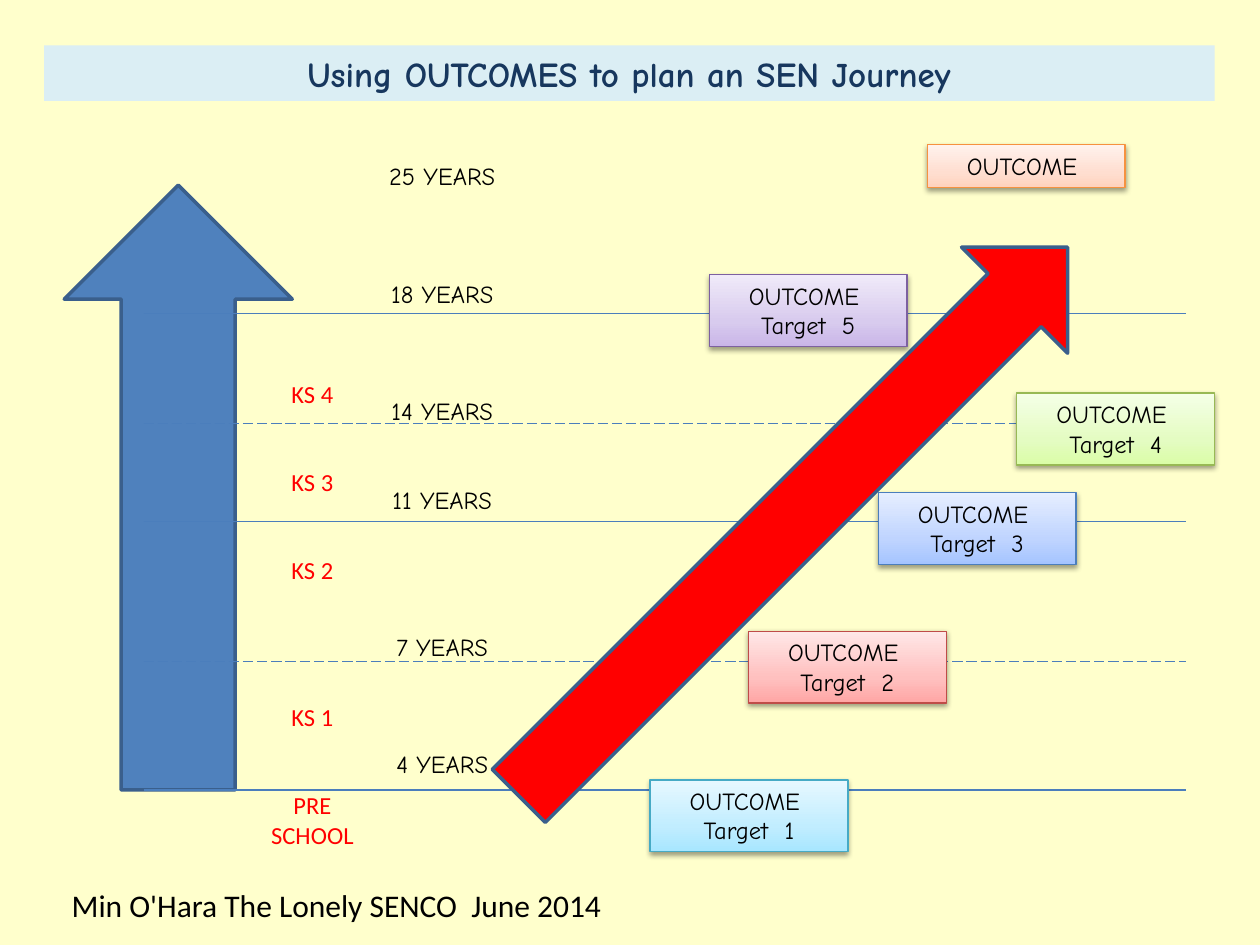
from dataclasses import dataclass

from lxml import etree
from pptx import Presentation
from pptx.dml.color import RGBColor
from pptx.enum.dml import MSO_LINE
from pptx.enum.shapes import MSO_CONNECTOR, MSO_SHAPE
from pptx.enum.text import MSO_ANCHOR, MSO_AUTO_SIZE, PP_ALIGN
from pptx.oxml import parse_xml
from pptx.oxml.ns import nsdecls, qn
from pptx.util import Emu, Inches, Pt

CENTER, LEFT = PP_ALIGN.CENTER, PP_ALIGN.LEFT
TOP, MIDDLE = MSO_ANCHOR.TOP, MSO_ANCHOR.MIDDLE
UP_ARROW, RECTANGLE = MSO_SHAPE.UP_ARROW, MSO_SHAPE.RECTANGLE
STRAIGHT, LONG_DASH = MSO_CONNECTOR.STRAIGHT, MSO_LINE.LONG_DASH
NO_AUTO_SIZE = MSO_AUTO_SIZE.NONE

SLIDE_WIDTH, SLIDE_HEIGHT = Inches(10), Inches(7.5)
TITLE_ONLY = 5
HAND, PLAIN = "Comic Neue", "Calibri"
BLACK, RED, NAVY = "000000", "FF0000", "17375E"
BLUE, LINE_BLUE, ARROW_EDGE = "4F81BD", "4B7EBC", "3A5F8C"
ROW_POINTS = 16.8  # one row of the age scale


@dataclass
class Area:
    """A rectangle in percent of the slide's width and height."""
    left: float
    top: float
    width: float
    height: float

    def lengths(self) -> tuple:
        return (across(self.left), down(self.top),
                across(self.width), down(self.height))


@dataclass
class Style:
    font: str
    size: float
    color: str
    bold: bool = False


@dataclass
class Label:
    text: str
    empty_rows: int = 0


@dataclass
class Outcome:
    left: float
    top: float
    edge: str
    gradient: tuple
    target: str = ""


@dataclass
class Stage:
    top: float
    dashed: bool = False


STAGES = [Stage(33.2), Stage(44.8, True), Stage(55.2),
          Stage(70, True), Stage(83.6)]
AGES = [Label("25 YEARS"), Label("18 YEARS", 3), Label("14 YEARS", 3),
        Label("11 YEARS", 2), Label("7 YEARS", 4), Label("4 YEARS", 3)]
KEY_STAGES = [Label("KS 4"), Label("KS 3", 2), Label("KS 2", 2),
              Label("KS 1", 4), Label("PRE", 2), Label("SCHOOL")]
OUTCOMES = [
    Outcome(51.6, 82.53, "46AAC5", ("A7E6FF", "C1EDFF", "E7F8FF"), "Target  1"),
    Outcome(59.4, 66.8, "BF4C48", ("FFA6A5", "FFC0BF", "FFE7E7"), "Target  2"),
    Outcome(69.7, 52.13, "4B7EBC", ("A4C4FF", "BFD4FF", "E6EEFF"), "Target  3"),
    Outcome(80.7, 41.6, "98B955", ("DAFDA7", "E4FCC2", "F5FFE7"), "Target  4"),
    Outcome(56.3, 29.07, "7D60A0", ("C9B5E8", "D8CBEE", "F0EAF9"), "Target  5"),
    Outcome(73.6, 15.33, "F69240", ("FFD2BD", "FFDED0", "FFF2ED")),
]


def across(percent: float) -> Emu:
    return Emu(round(SLIDE_WIDTH * percent / 100))


def down(percent: float) -> Emu:
    return Emu(round(SLIDE_HEIGHT * percent / 100))


def color(value: str) -> RGBColor:
    return RGBColor.from_string(value)


def write(shape, labels: list, style: Style, align=CENTER, anchor=TOP) -> None:
    frame = shape.text_frame
    frame.word_wrap = True
    frame.auto_size = NO_AUTO_SIZE
    frame.vertical_anchor = anchor
    for index, label in enumerate(labels):
        paragraph = frame.add_paragraph() if index else frame.paragraphs[0]
        paragraph.alignment = align
        if label.empty_rows:
            paragraph.space_before = Pt(label.empty_rows * ROW_POINTS)
        run = paragraph.add_run()
        run.text = label.text
        run.font.name = style.font
        run.font.size = Pt(style.size)
        run.font.bold = style.bold
        run.font.color.rgb = color(style.color)


def add_text(slide, area: Area, labels: list, style: Style, align=CENTER) -> None:
    write(slide.shapes.add_textbox(*area.lengths()), labels, style, align)


def add_arrow(slide, area: Area, fill: str, rotation: float = 0) -> None:
    arrow = slide.shapes.add_shape(UP_ARROW, *area.lengths())
    arrow.shadow.inherit = False
    arrow.rotation = rotation
    arrow.fill.solid()
    arrow.fill.fore_color.rgb = color(fill)
    arrow.line.color.rgb = color(ARROW_EDGE)
    arrow.line.width = Pt(2)


def add_stage_line(slide, stage: Stage) -> None:
    y = down(stage.top)
    connector = slide.shapes.add_connector(STRAIGHT, across(11.4), y, across(94.1), y)
    connector.line.color.rgb = color(LINE_BLUE)
    connector.line.width = Pt(0.75)
    if stage.dashed:
        connector.line.dash_style = LONG_DASH
    etree.SubElement(connector._element.spPr, qn("a:effectLst"))


def set_gradient(shape, colors: tuple) -> None:
    """Fill from the bottom edge upwards."""
    stops = "".join(
        f'<a:gs pos="{share * 1000}"><a:srgbClr val="{value}"/></a:gs>'
        for share, value in zip((0, 35, 100), colors))
    gradient = parse_xml(
        f'<a:gradFill {nsdecls("a")} rotWithShape="1"><a:gsLst>{stops}</a:gsLst>'
        f'<a:lin ang="{270 * 60000}" scaled="0"/></a:gradFill>')
    shape._element.spPr.find(qn("a:prstGeom")).addnext(gradient)


def set_shadow(shape) -> None:
    shape.shadow.inherit = False
    effects = shape._element.spPr.find(qn("a:effectLst"))
    effects.append(parse_xml(
        f'<a:outerShdw {nsdecls("a")} blurRad="{Pt(3.1)}" dist="{Pt(1.6)}" '
        f'dir="{90 * 60000}" rotWithShape="0"><a:srgbClr val="{BLACK}">'
        '<a:alpha val="38000"/></a:srgbClr></a:outerShdw>'))


def add_outcome(slide, outcome: Outcome) -> None:
    labels = [Label("OUTCOME ")]
    if outcome.target:
        labels.append(Label(outcome.target))
    height = 7.6 if outcome.target else 4.53
    area = Area(outcome.left, outcome.top, 15.7, height)
    box = slide.shapes.add_shape(RECTANGLE, *area.lengths())
    set_gradient(box, outcome.gradient)
    box.line.color.rgb = color(outcome.edge)
    box.line.width = Pt(0.75)
    set_shadow(box)
    write(box, labels, Style(HAND, 14, BLACK))


def set_title(slide, area: Area, text: str) -> None:
    title = slide.shapes.title
    title.left, title.top, title.width, title.height = area.lengths()
    title.fill.solid()
    title.fill.fore_color.rgb = color("DBEEF4")
    write(title, [Label(text)], Style(HAND, 20, NAVY, True), anchor=MIDDLE)


def main() -> None:
    presentation = Presentation()
    presentation.slide_width, presentation.slide_height = SLIDE_WIDTH, SLIDE_HEIGHT
    slide = presentation.slides.add_slide(presentation.slide_layouts[TITLE_ONLY])
    slide.background.fill.solid()
    slide.background.fill.fore_color.rgb = color("FFFFCC")

    set_title(slide, Area(3.5, 4.8, 92.9, 5.87),
              "Using OUTCOMES to plan an SEN Journey")
    add_text(slide, Area(4.7, 93.07, 46.5, 5.33),
             [Label("Min O'Hara The Lonely SENCO  June 2014")],
             Style(PLAIN, 18, BLACK), LEFT)
    add_arrow(slide, Area(5.1, 19.6, 18.1, 64), BLUE)
    for stage in STAGES:
        add_stage_line(slide, stage)
    add_text(slide, Area(28, 16.4, 14.2, 67.33), AGES, Style(HAND, 14, BLACK))
    add_arrow(slide, Area(57, 14.13, 11.9, 82.13), RED, 45)
    for outcome in OUTCOMES:
        add_outcome(slide, outcome)
    add_text(slide, Area(20.1, 39.4, 9.4, 51.6), KEY_STAGES, Style(PLAIN, 14, RED))
    presentation.save("out.pptx")


if __name__ == "__main__":
    main()
